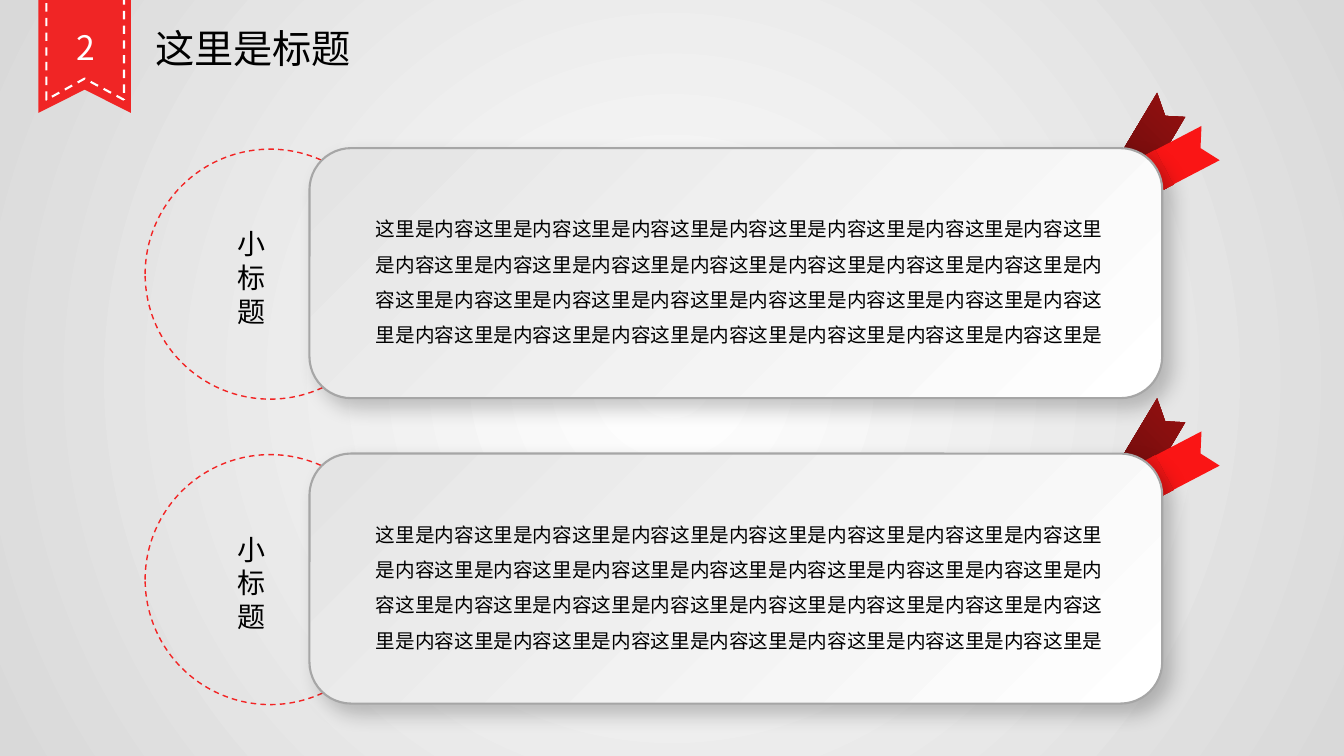
from dataclasses import dataclass

import lxml.etree
import pptx
import pptx.dml.color
import pptx.enum.dml
import pptx.enum.shapes
import pptx.enum.text
import pptx.oxml.ns
import pptx.util

RGBColor = pptx.dml.color.RGBColor
qn = pptx.oxml.ns.qn

WHITE = RGBColor(0xFF, 0xFF, 0xFF)
BLACK = RGBColor(0x00, 0x00, 0x00)
PAGE_GREY = RGBColor(0xD9, 0xD9, 0xD9)
CARD_GREY = RGBColor(0xE4, 0xE4, 0xE4)
BORDER_GREY = RGBColor(0xA6, 0xA6, 0xA6)
RIBBON_RED = RGBColor(0xF0, 0x25, 0x25)
CIRCLE_RED = RGBColor(0xF2, 0x24, 0x24)
FLAG_RED = RGBColor(0xFA, 0x15, 0x15)
FOLD_RED = RGBColor(0xC8, 0x14, 0x14)
DARK_REDS = (RGBColor(0x59, 0x0A, 0x0A), RGBColor(0x7E, 0x0E, 0x0E),
             RGBColor(0x96, 0x10, 0x10))

HEADING_FONT = "Noto Sans CJK JP"
BODY_FONT = "Noto Sans CJK SC"

# The page is a grid of 40 columns by 22.5 rows of square cells.
COLUMNS, ROWS = 40, 22.5
CELL = pptx.util.Inches(13.33) / COLUMNS
CARD_TOP, CARD_PITCH = 4.41, 9.09

RIBBON = ((3.9, 3.36), (2.52, 2.67), (1.14, 3.36), (1.14, -7.14), (3.9, -7.14))
STITCHING = ((3.69, 2.97), (2.52, 2.34), (1.38, 2.97), (1.38, -6.84), (3.69, -6.84))
# Flag corners are measured down from the top of their card.
BACK_FLAG = ((34.44, -1.65), (33.6, -0.24), (33, 0.78), (33.54, 1.8),
             (34.44, 0.48), (35.28, -0.93), (34.68, -0.96))
FRONT_FLAG = ((36.3, 0.36), (34.92, 1.08), (33.54, 1.8), (33, 0.78),
              (34.38, 0.06), (35.76, -0.66), (35.73, 0))
FOLD = ((34.92, 1.08), (33.54, 1.8), (33, 0.78), (34.38, 0.06))


@dataclass(frozen=True)
class Area:
    column: float
    row: float
    columns: float
    rows: float

    def emu(self, top: float = 0) -> tuple[int, ...]:
        cells = (self.column, self.row + top, self.columns, self.rows)
        return tuple(round(value * CELL) for value in cells)


@dataclass(frozen=True)
class Card:
    label: str
    body: str


CIRCLE = Area(4.32, 0.03, 7.44, 7.44)
PANEL = Area(9.21, 0, 25.38, 7.44)
LABEL = Area(6.78, 2.19, 2.05, 3.3)
BODY = Area(10.89, 1.56, 22.53, 4.5)
CARDS = [Card("小标题", "这里是内容" * 29 + "这里是")] * 2


def paint_gradient(fill, element, colors, angle=None, focus=None) -> None:
    """Spread colors evenly, along an angle or out from a focus (l, t, r, b percent)."""
    fill.gradient()
    gradient = next(element.iter(qn("a:gradFill")))
    gradient.clear()
    gradient.set("rotWithShape", "1")
    stops = lxml.etree.SubElement(gradient, qn("a:gsLst"))
    for index, color in enumerate(colors):
        position = round(100000 * index / (len(colors) - 1))
        stop = lxml.etree.SubElement(stops, qn("a:gs"), pos=str(position))
        lxml.etree.SubElement(stop, qn("a:srgbClr"), val=str(color))
    if focus is None:
        lxml.etree.SubElement(gradient, qn("a:lin"),
                              ang=str(round(angle * 60000)), scaled="0")
    else:
        circle = lxml.etree.SubElement(gradient, qn("a:path"))
        circle.set("path", "circle")
        sides = {side: str(share * 1000) for side, share in zip("ltrb", focus)}
        lxml.etree.SubElement(circle, qn("a:fillToRect"), **sides)


def style_shape(shape, fill=None, line=None, width=1.5, dashed=False) -> None:
    shape.shadow.inherit = False
    if fill is None:
        shape.fill.background()
    else:
        shape.fill.solid()
        shape.fill.fore_color.rgb = fill
    if line is None:
        shape.line.fill.background()
    else:
        shape.line.color.rgb = line
        shape.line.width = pptx.util.Pt(width)
        if dashed:
            shape.line.dash_style = pptx.enum.dml.MSO_LINE.DASH


def add_outline(shapes, corners, top=0.0, **style):
    points = [(round(x * CELL), round((y + top) * CELL)) for x, y in corners]
    builder = shapes.build_freeform(*points[0], scale=1.0)
    builder.add_line_segments(points[1:], close=True)
    shape = builder.convert_to_shape()
    style_shape(shape, **style)
    return shape


def add_text(page, area: Area, text: str, *, top=0.0, size=14, font=HEADING_FONT,
             color=BLACK, align=pptx.enum.text.PP_ALIGN.LEFT, spacing=None) -> None:
    box = page.shapes.add_textbox(*area.emu(top))
    box.text_frame.word_wrap = True
    box.text_frame.auto_size = pptx.enum.text.MSO_AUTO_SIZE.SHAPE_TO_FIT_TEXT
    para = box.text_frame.paragraphs[0]
    para.alignment = align
    para.line_spacing = spacing
    span = para.add_run()
    span.text = text
    span.font.size = pptx.util.Pt(size)
    span.font.color.rgb = color
    span.font.name = font
    for properties in box.element.iter(qn("a:rPr")):
        lxml.etree.SubElement(properties, qn("a:ea"), typeface=font)


def add_soft_shadow(shape) -> None:
    effects = next(shape.element.iter(qn("a:effectLst")))
    shadow = lxml.etree.SubElement(
        effects, qn("a:outerShdw"), blurRad=str(pptx.util.Pt(14)),
        dist=str(pptx.util.Pt(9)), dir=str(45 * 60000), algn="tl", rotWithShape="0")
    color = lxml.etree.SubElement(shadow, qn("a:srgbClr"), val=str(BLACK))
    lxml.etree.SubElement(color, qn("a:alpha"), val="22000")


def add_flags(page, top: float) -> None:
    shapes = page.shapes.add_group_shape().shapes
    back = add_outline(shapes, BACK_FLAG, top)
    paint_gradient(back.fill, back.element, DARK_REDS, focus=(0, 100, 100, 0))
    add_outline(shapes, FRONT_FLAG, top, fill=FLAG_RED)
    fold = add_outline(shapes, FOLD, top)
    paint_gradient(fold.fill, fold.element, (FOLD_RED, FLAG_RED), angle=332.6)


def add_card(page, card: Card, top: float) -> None:
    kinds = pptx.enum.shapes.MSO_SHAPE
    add_flags(page, top)
    circle = page.shapes.add_shape(kinds.OVAL, *CIRCLE.emu(top))
    style_shape(circle, line=CIRCLE_RED, width=1, dashed=True)
    panel = page.shapes.add_shape(kinds.ROUNDED_RECTANGLE, *PANEL.emu(top))
    style_shape(panel, line=BORDER_GREY)
    paint_gradient(panel.fill, panel.element, (CARD_GREY, WHITE), angle=45)
    add_soft_shadow(panel)
    add_text(page, LABEL, card.label, top=top, size=20)
    add_text(page, BODY, card.body, top=top, font=BODY_FONT, spacing=1.5)


def add_header(page) -> None:
    shapes = page.shapes.add_group_shape().shapes
    add_outline(shapes, RIBBON, fill=RIBBON_RED)
    add_outline(shapes, STITCHING, line=WHITE, dashed=True)
    add_text(page, Area(1.59, 0.66, 1.95, 1.5), "2", size=24, font=BODY_FONT,
             color=WHITE, align=pptx.enum.text.PP_ALIGN.CENTER)
    add_text(page, Area(4.32, 0.57, 7.44, 1.71), "这里是标题", size=28)


def main() -> None:
    deck = pptx.Presentation()
    deck.slide_width = round(COLUMNS * CELL)
    deck.slide_height = round(ROWS * CELL)
    page = deck.slides.add_slide(deck.slide_layouts[6])
    paint_gradient(page.background.fill, page.element, (WHITE, PAGE_GREY),
                   focus=(50, 50, 50, 50))
    add_header(page)
    for index, card in enumerate(CARDS):
        add_card(page, card, CARD_TOP + index * CARD_PITCH)
    deck.save("out.pptx")


if __name__ == "__main__":
    main()
